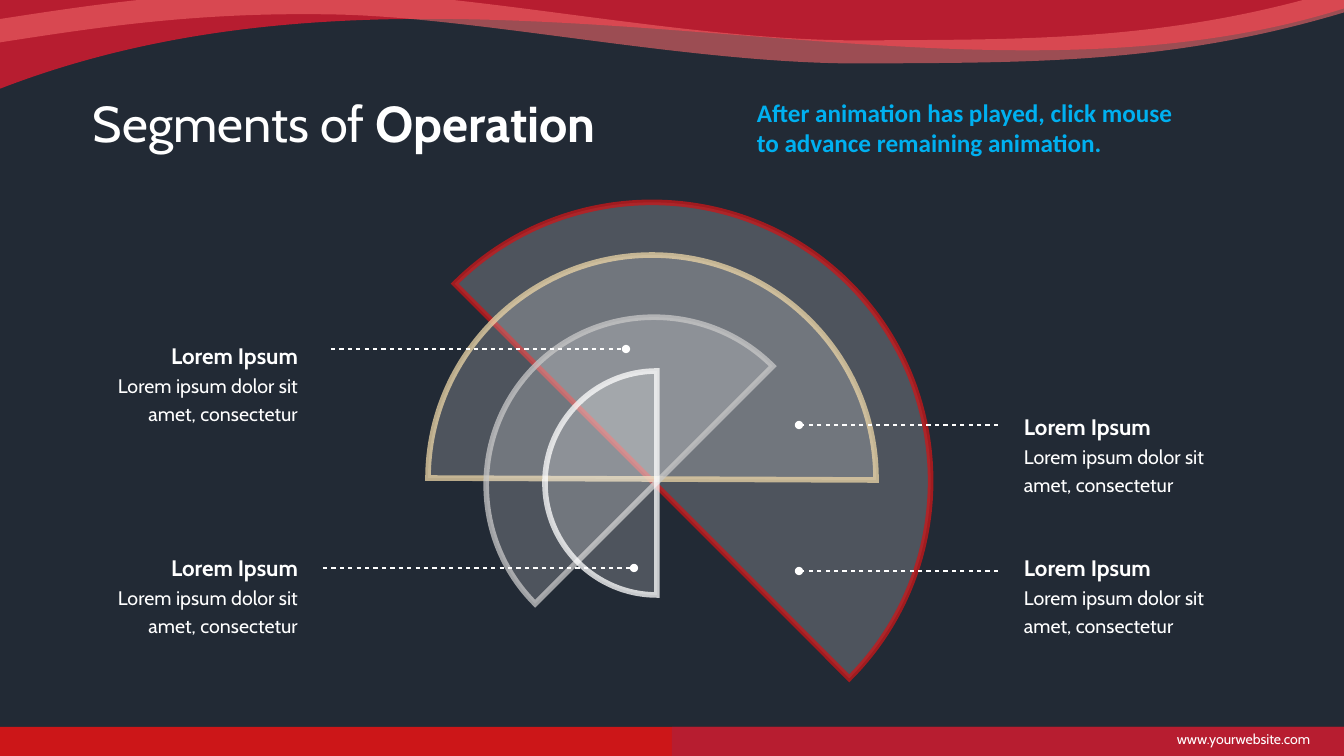
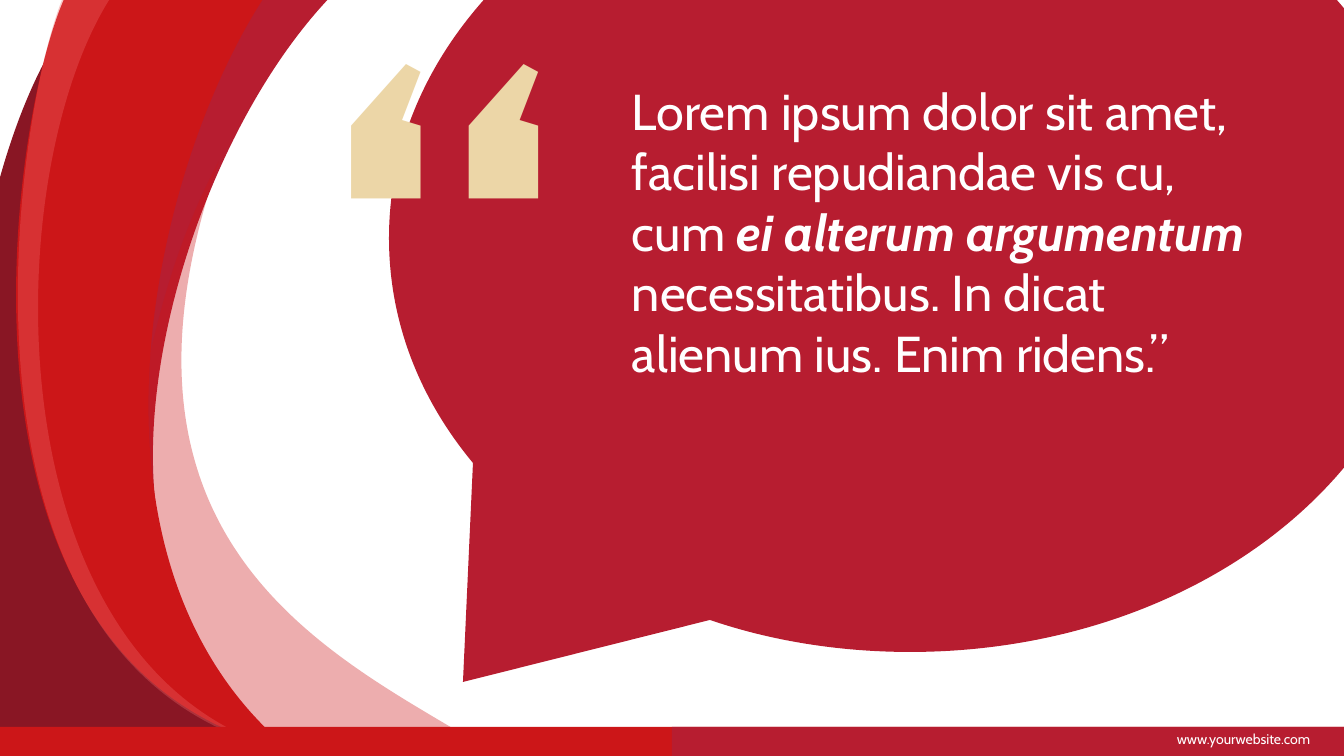
from math import cos, radians, sin

from lxml import etree
from pptx import Presentation
from pptx.dml.color import RGBColor
from pptx.enum.shapes import MSO_CONNECTOR, MSO_SHAPE
from pptx.enum.text import MSO_ANCHOR, MSO_AUTO_SIZE, PP_ALIGN
from pptx.oxml.ns import qn
from pptx.util import Pt

WIDTH, HEIGHT = 1344, 756
SCALE = 12192000 / WIDTH
STRAIGHT = MSO_CONNECTOR.STRAIGHT
RECTANGLE = MSO_SHAPE.RECTANGLE
GROW = MSO_AUTO_SIZE.SHAPE_TO_FIT_TEXT
LEFT, RIGHT = PP_ALIGN.LEFT, PP_ALIGN.RIGHT
TOP, MIDDLE = MSO_ANCHOR.TOP, MSO_ANCHOR.MIDDLE
QUARTER = 0.55

WHITE = "FFFFFF"
NAVY = "222A35"
RED = "CC1618"
CRIMSON = "B71D30"
MAROON = "891624"
CORAL = "EE6567"
SAND = "ECD6A7"
SILVER = "C8C8C8"
SKY = "00B0F0"


def px(length):
    return round(length * SCALE)


def rgb(color):
    return RGBColor.from_string(color)


def fade(holder, percent):
    color = holder.find(qn("a:solidFill")).find(qn("a:srgbClr"))
    etree.SubElement(color, qn("a:alpha"), val=str(percent * 1000))


def extent(values):
    low, high = [], []
    for index, value in enumerate(values):
        if len(value) == 1:
            samples = value
        else:
            a, (b, c, d) = values[index - 1][-1], value
            samples = []
            for step in range(101):
                t = step / 100
                s = 1 - t
                samples.append(a * s**3 + 3 * b * s * s * t + 3 * c * s * t * t + d * t**3)
        low.append(min(samples))
        high.append(max(samples))
    return px(min(low)), px(max(high))


class Deck:
    font = "Cabin"

    def __init__(self):
        self.deck = Presentation()
        self.deck.slide_width = px(WIDTH)
        self.deck.slide_height = px(HEIGHT)
        self.page = None

    def new_page(self):
        self.page = self.deck.slides.add_slide(self.deck.slide_layouts[6])

    def paint(self, shape, fill=None, alpha=100, line=None, weight=0, line_alpha=100):
        shape.shadow.inherit = False
        properties = shape._element.spPr
        if fill:
            shape.fill.solid()
            shape.fill.fore_color.rgb = rgb(fill)
            if alpha < 100:
                fade(properties, alpha)
        else:
            shape.fill.background()
        if line:
            shape.line.color.rgb = rgb(line)
            shape.line.width = Pt(weight)
            outline = properties.find(qn("a:ln"))
            fade(outline, line_alpha)
            etree.SubElement(outline, qn("a:miter"), lim="800000")
        else:
            shape.line.fill.background()

    def rectangle(self, x, y, width, height, fill):
        shape = self.page.shapes.add_shape(RECTANGLE, px(x), px(y), px(width), px(height))
        self.paint(shape, fill)

    def curve(self, *segments, close=True, **style):
        anchors = [(px(segment[-2]), px(segment[-1])) for segment in segments]
        builder = self.page.shapes.build_freeform(*anchors[0], scale=1.0)
        builder.add_line_segments(anchors[1:], close=close)
        shape = builder.convert_to_shape()
        left, right = extent([segment[::2] for segment in segments])
        top, bottom = extent([segment[1::2] for segment in segments])
        shape.left, shape.top = left, top
        shape.width, shape.height = right - left, bottom - top
        route = next(shape._element.spPr.iter(qn("a:path")))
        route.set("w", str(right - left))
        route.set("h", str(bottom - top))
        for node, segment in zip(list(route), segments):
            if len(segment) == 6:
                node.tag = qn("a:cubicBezTo")
            for point in list(node):
                node.remove(point)
            for x, y in zip(segment[::2], segment[1::2]):
                etree.SubElement(node, qn("a:pt"), x=str(px(x) - left), y=str(px(y) - top))
        self.paint(shape, **style)

    def half_disc(self, x, y, radius, start, line):
        def place(angle, pull=0):
            turn = radians(angle)
            return (x + radius * (cos(turn) - pull * sin(turn)),
                    y + radius * (sin(turn) + pull * cos(turn)))

        quarters = [place(angle, QUARTER) + place(angle + 90, -QUARTER) + place(angle + 90)
                    for angle in (start, start + 90)]
        self.curve(place(start), *quarters,
                   fill=WHITE, alpha=20, line=line, weight=4, line_alpha=74)

    def leader(self, start, end, y):
        connector = self.page.shapes.add_connector(STRAIGHT, px(start), px(y), px(end), px(y))
        connector.line.color.rgb = rgb(WHITE)
        connector.line.width = Pt(1.5)
        properties = connector._element.spPr
        outline = properties.find(qn("a:ln"))
        dashes = etree.SubElement(outline, qn("a:custDash"))
        etree.SubElement(dashes, qn("a:ds"), d="200000", sp="200000")
        etree.SubElement(outline, qn("a:tailEnd"), type="oval")
        etree.SubElement(properties, qn("a:effectLst"))

    def text(self, x, y, width, height, paragraphs, color=WHITE, font=None,
             align=LEFT, anchor=TOP, inset=True, spacing=None):
        box = self.page.shapes.add_textbox(px(x), px(y), px(width), px(height))
        frame = box.text_frame
        frame.word_wrap = True
        frame.vertical_anchor = anchor
        if inset:
            frame.auto_size = GROW
        else:
            frame.margin_left = frame.margin_right = 0
            frame.margin_top = frame.margin_bottom = 0
        for index, spans in enumerate(paragraphs):
            para = frame.add_paragraph() if index else frame.paragraphs[0]
            para.alignment = align
            if spacing:
                para.line_spacing = spacing
            for words, size, bold, italic in spans:
                span = para.add_run()
                span.text = words
                span.font.size = Pt(size)
                span.font.bold = bold
                span.font.italic = italic
                span.font.name = font or self.font
                span.font.color.rgb = rgb(color)

    def callout(self, x, y, align):
        self.text(x, y, 207, 94,
                  [[("Lorem Ipsum", 16, True, False)],
                   [("Lorem ipsum dolor sit amet, consectetur", 14, False, False)]],
                  align=align, anchor=MIDDLE, inset=False, spacing=1.2)

    def footer(self):
        self.rectangle(0, 727, WIDTH, 29, RED)
        self.rectangle(WIDTH // 2, 727, WIDTH // 2, 29, CRIMSON)
        self.text(1096, 726, 224, 27, [[("www.yourwebsite.com", 10, False, False)]],
                  align=RIGHT)


def segments_page(deck):
    deck.new_page()
    deck.rectangle(0, 0, WIDTH, HEIGHT, NAVY)
    for x, y, radius, start, line in (
        (652, 481, 279, 225, RED),
        (652, 479, 224, 180.25, SAND),
        (654, 485, 168, 135, SILVER),
        (657, 483, 112, 90, WHITE),
    ):
        deck.half_disc(x, y, radius, start, line)
    for start, end, y in ((323, 634, 568), (331, 626, 349), (998, 799, 571), (998, 799, 425)):
        deck.leader(start, end, y)
    deck.text(93, 86, 580, 72,
              [[("Segments of ", 36, False, False), ("Operation", 36, True, False)]],
              anchor=MIDDLE, inset=False)
    for x, y, align in ((1024, 405, LEFT), (1024, 546, LEFT), (91, 546, RIGHT), (91, 334, RIGHT)):
        deck.callout(x, y, align)
    deck.footer()
    deck.curve((-46, -10), (397, -208, 1004, 121, 1435, -79), (1437, -28),
               (1003, 179, 450, -116, -46, 108), fill=CRIMSON)
    deck.curve((-21, 34), (83, 18, 188, 0, 336, 3), (483, 6, 694, 53, 864, 52),
               (1033, 51, 1177, 53, 1355, -3),
               close=False, line=CORAL, weight=16.5, line_alpha=60)
    deck.text(747, 92, 449, 72,
              [[("After animation has played, click mouse to advance remaining animation.",
                 18, True, False)]],
              color=SKY, font="Calibri")


def quote_page(deck):
    deck.new_page()
    deck.curve((218, -10), (337, -10), (218, 109, 133, 350, 157, 515),
               (-20, 330, 78, 67, 131, -8), fill=CRIMSON)
    deck.curve((910, -176), (1199, -176, 1431, 9, 1431, 238),
               (1431, 467, 1199, 652, 910, 652), (840, 652, 771, 641, 710, 620),
               (463, 682), (473, 463), (419, 398, 389, 321, 389, 238),
               (389, 9, 623, -176, 910, -176), fill=CRIMSON)
    deck.text(318, -80, 187, 688, [[("“", 400, True, False)]], color=SAND)
    deck.text(632, 80, 635, 377,
              [[("Lorem ipsum dolor sit amet, facilisi repudiandae vis cu, cum ", 36, False, False),
                ("ei alterum argumentum ", 36, True, True),
                ("necessitatibus. In dicat alienum ius. Enim ridens.”", 36, False, False)]],
              inset=False)
    deck.curve((309, 771), (500, 757), (357, 665, 81, 563, 219, 161),
               (111, 360, 109, 665, 160, 768), fill=RED, alpha=35)
    deck.curve((142, 756), (293, 756), (158, 650, -29, 520, 46, 59),
               (-61, 259, -58, 650, -8, 753), fill=MAROON)
    deck.curve((151, -10), (269, -10), (152, 162, 61, 561, 290, 750),
               (-78, 668, 13, 101, 67, -7), fill=RED)
    deck.curve((94, -8), (115, -9), (-3, 163, -14, 671, 289, 752),
               (-79, 670, 19, 93, 65, -7), (87, -8, 83, -8, 94, -8), fill=CORAL, alpha=35)
    deck.footer()


def main():
    deck = Deck()
    segments_page(deck)
    quote_page(deck)
    deck.deck.save("out.pptx")


if __name__ == "__main__":
    main()
